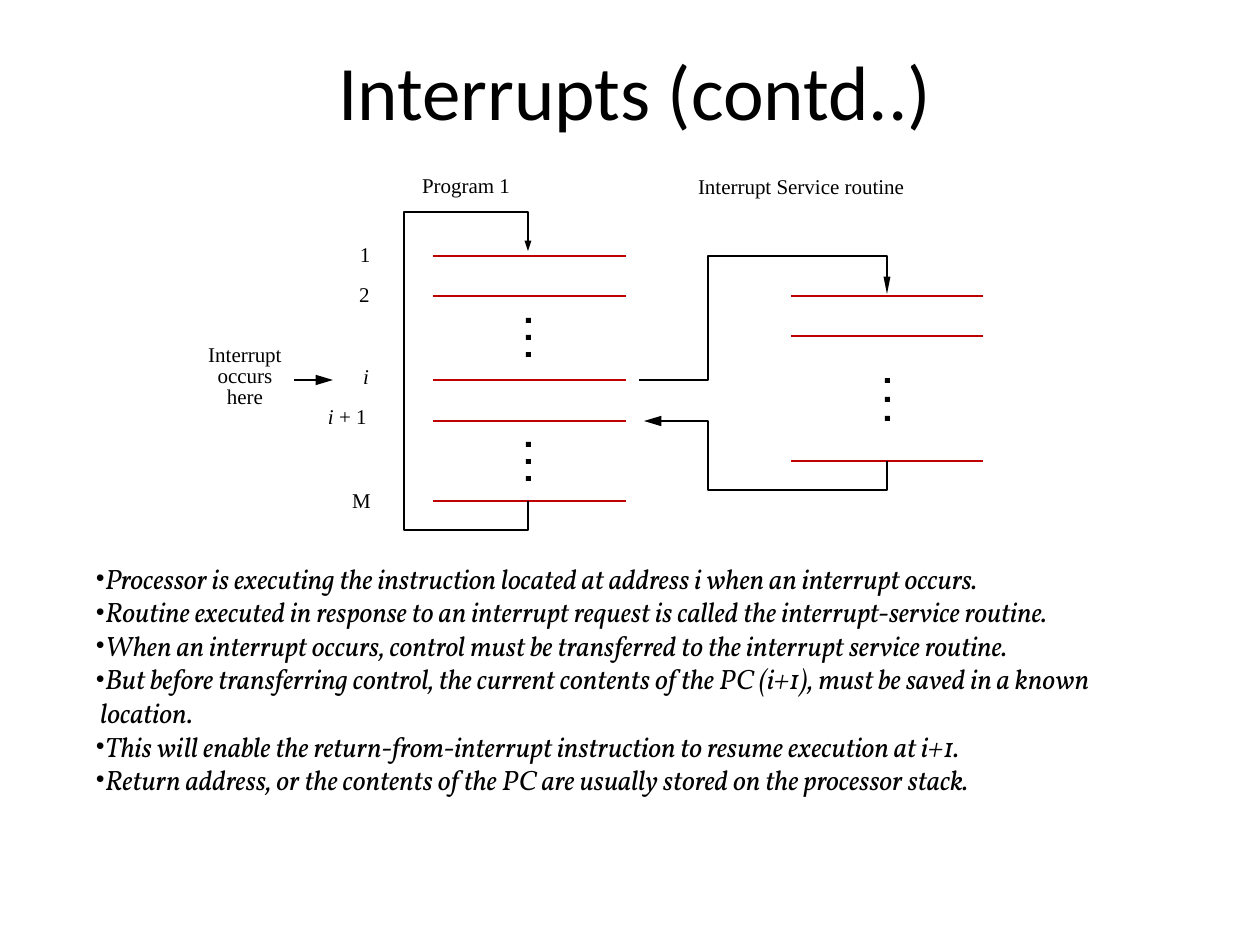
from lxml.etree import SubElement
from pptx import Presentation
from pptx.dml.color import RGBColor
from pptx.enum.shapes import MSO_CONNECTOR, MSO_SHAPE
from pptx.enum.text import MSO_ANCHOR, PP_ALIGN
from pptx.oxml.ns import qn
from pptx.util import Emu, Pt

SCALE = 914400 / 126
COLORS = {"ink": "000000", "instruction": "C00000"}
SERIF = "Times New Roman"
LINE_WIDTH = 1.38
PROGRAM_X, ISR_X = 528, 887
PROGRAM_SPAN, ISR_SPAN = (433, 626), (791, 983)
PROGRAM_ROWS = (256, 296, 380, 421, 501)
ISR_ROWS = (296, 336, 461)

LABELS = [
    (698, 174, 230, [("Interrupt Service routine", False)]),
    (422, 173, 110, [("Program 1", False)]),
    (360, 242, 20, [("1", False)]),
    (359, 282, 20, [("2", False)]),
    (363, 364, 20, [("i", True)]),
    (328, 404, 60, [("i", True), (" + 1", False)]),
    (352, 488, 30, [("M", False)]),
]
POINTS = [
    ("Processor is executing the instruction located at address i when an interrupt occurs.", True),
    ("Routine executed in response to an interrupt request is called the interrupt-service routine.", True),
    ("When an interrupt occurs, control must be transferred to the interrupt service routine.", True),
    ("But before transferring control, the current contents of the PC (i+1), must be saved in a known", True),
    (" location.", False),
    ("This will enable the return-from-interrupt instruction to resume execution at i+1.", True),
    ("Return address, or the contents of the PC are usually stored on the processor stack.", True),
]


def px(n):
    """Turn pixels into EMU."""
    return Emu(round(n * SCALE))


def rgb(name):
    """Look up a named colour."""
    return RGBColor.from_string(COLORS[name])


def add_box(s, x, y, w, h, inset=True):
    """Add an unwrapped text box and return its text frame."""
    tf = s.shapes.add_textbox(px(x), px(y), px(w), px(h)).text_frame
    tf.word_wrap = False
    if not inset:
        tf.margin_left = tf.margin_right = tf.margin_top = tf.margin_bottom = 0
    return tf


def next_paragraph(tf, i):
    """Return the first paragraph, or a new one after it."""
    return tf.add_paragraph() if i else tf.paragraphs[0]


def add_run(p, text, size, font, italic=False):
    """Add one styled run of text."""
    r = p.add_run()
    r.text = text
    r.font.size, r.font.name, r.font.italic = Pt(size), font, italic
    r.font.color.rgb = rgb("ink")


def add_title(s, text):
    """Add the centred slide title."""
    tf = add_box(s, 63, 11, 1144, 158)
    tf.word_wrap = True
    tf.vertical_anchor = MSO_ANCHOR.MIDDLE
    p = tf.paragraphs[0]
    p.alignment = PP_ALIGN.CENTER
    add_run(p, text, 44, "Calibri")


def add_label(s, x, y, w, runs):
    """Add a one-line diagram label."""
    p = add_box(s, x, y, w, 25, inset=False).paragraphs[0]
    for text, italic in runs:
        add_run(p, text, 12, SERIF, italic)


def add_stacked_label(s, x, y, w, lines):
    """Add a centred label with tight lines."""
    tf = add_box(s, x, y, w, 64, inset=False)
    for i, text in enumerate(lines):
        p = next_paragraph(tf, i)
        p.alignment = PP_ALIGN.CENTER
        p.line_spacing = Pt(12.2)
        add_run(p, text, 12, SERIF)


def add_points(s, points):
    """Add the explanatory bullet list."""
    tf = add_box(s, 83, 555, 1104, 248)
    for i, (text, bullet) in enumerate(points):
        p = next_paragraph(tf, i)
        if bullet:
            pPr = p._p.get_or_add_pPr()
            SubElement(pPr, qn("a:buFont"), typeface=SERIF)
            SubElement(pPr, qn("a:buChar"), char="•")
        add_run(p, text, 16, "Vollkorn", True)


def set_line(sp, color):
    """Set the stroke shared by all diagram lines."""
    sp.line.color.rgb = rgb(color)
    sp.line.width = Pt(LINE_WIDTH)


def add_arrowhead(sp, width, length):
    """Put a triangle at the end of a line."""
    SubElement(sp.line._get_or_add_ln(), qn("a:tailEnd"),
               type="triangle", w=width, len=length)


def add_line(s, x1, y1, x2, y2, color):
    """Add a straight connector without a shadow."""
    sp = s.shapes.add_connector(MSO_CONNECTOR.STRAIGHT, px(x1), px(y1), px(x2), px(y2))
    set_line(sp, color)
    SubElement(sp._element.spPr, qn("a:effectLst"))
    return sp


def add_route(s, points, width, length):
    """Add an open path with an arrowhead at its end."""
    fb = s.shapes.build_freeform(*points[0], scale=SCALE)
    fb.add_line_segments(points[1:], close=False)
    sp = fb.convert_to_shape()
    sp.fill.background()
    sp.shadow.inherit = False
    set_line(sp, "ink")
    add_arrowhead(sp, width, length)


def add_ellipsis(s, x, y, step):
    """Add three square dots down a column."""
    for i in range(3):
        sp = s.shapes.add_shape(MSO_SHAPE.RECTANGLE, px(x - 2), px(y + i * step - 2), px(5), px(5))
        sp.shadow.inherit = False
        sp.fill.solid()
        sp.fill.fore_color.rgb = rgb("ink")
        sp.line.fill.background()


def main():
    """Build the slide and save it."""
    prs = Presentation()
    prs.slide_width, prs.slide_height = px(1260), px(945)
    s = prs.slides.add_slide(prs.slide_layouts[6])
    add_title(s, "Interrupts (contd..)")
    for label in LABELS:
        add_label(s, *label)
    add_stacked_label(s, 200, 345, 90, ["Interrupt", "occurs", "here"])
    add_arrowhead(add_line(s, 294, 380, 333, 380, "ink"), "med", "lg")
    for (left, right), rows in ((PROGRAM_SPAN, PROGRAM_ROWS), (ISR_SPAN, ISR_ROWS)):
        for y in rows:
            add_line(s, left, y, right, y, "instruction")
    add_route(s, [(PROGRAM_X, 501), (PROGRAM_X, 530), (404, 530), (404, 212),
                  (PROGRAM_X, 212), (PROGRAM_X, 251)], "sm", "med")
    add_route(s, [(639, 380), (708, 380), (708, 256), (ISR_X, 256), (ISR_X, 294)], "sm", "lg")
    add_route(s, [(ISR_X, 461), (ISR_X, 490), (708, 490), (708, 421), (644, 421)], "med", "lg")
    for dots in ((PROGRAM_X, 320, 17), (PROGRAM_X, 444, 17), (ISR_X, 380, 19)):
        add_ellipsis(s, *dots)
    add_points(s, POINTS)
    prs.save("out.pptx")


if __name__ == "__main__":
    main()
